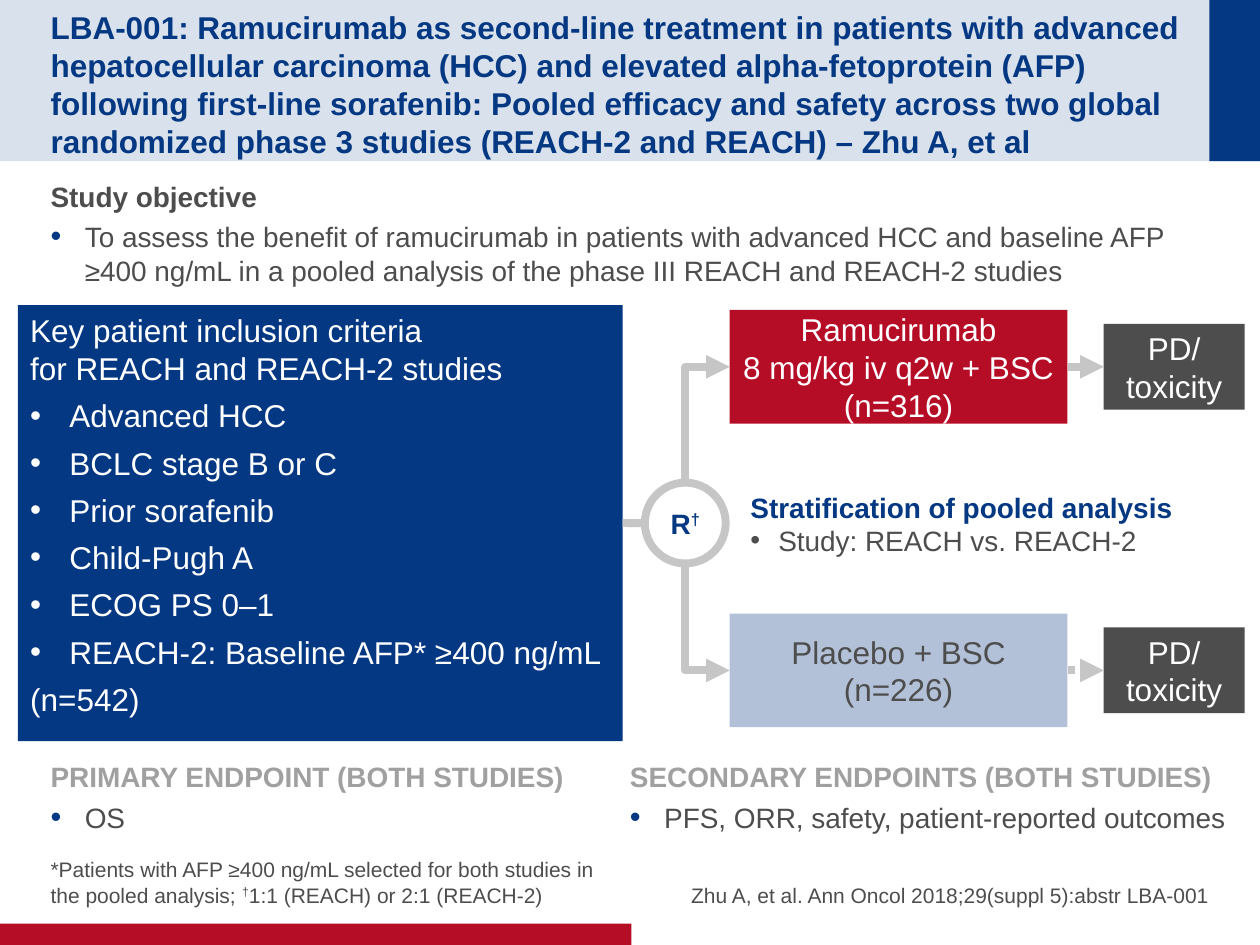
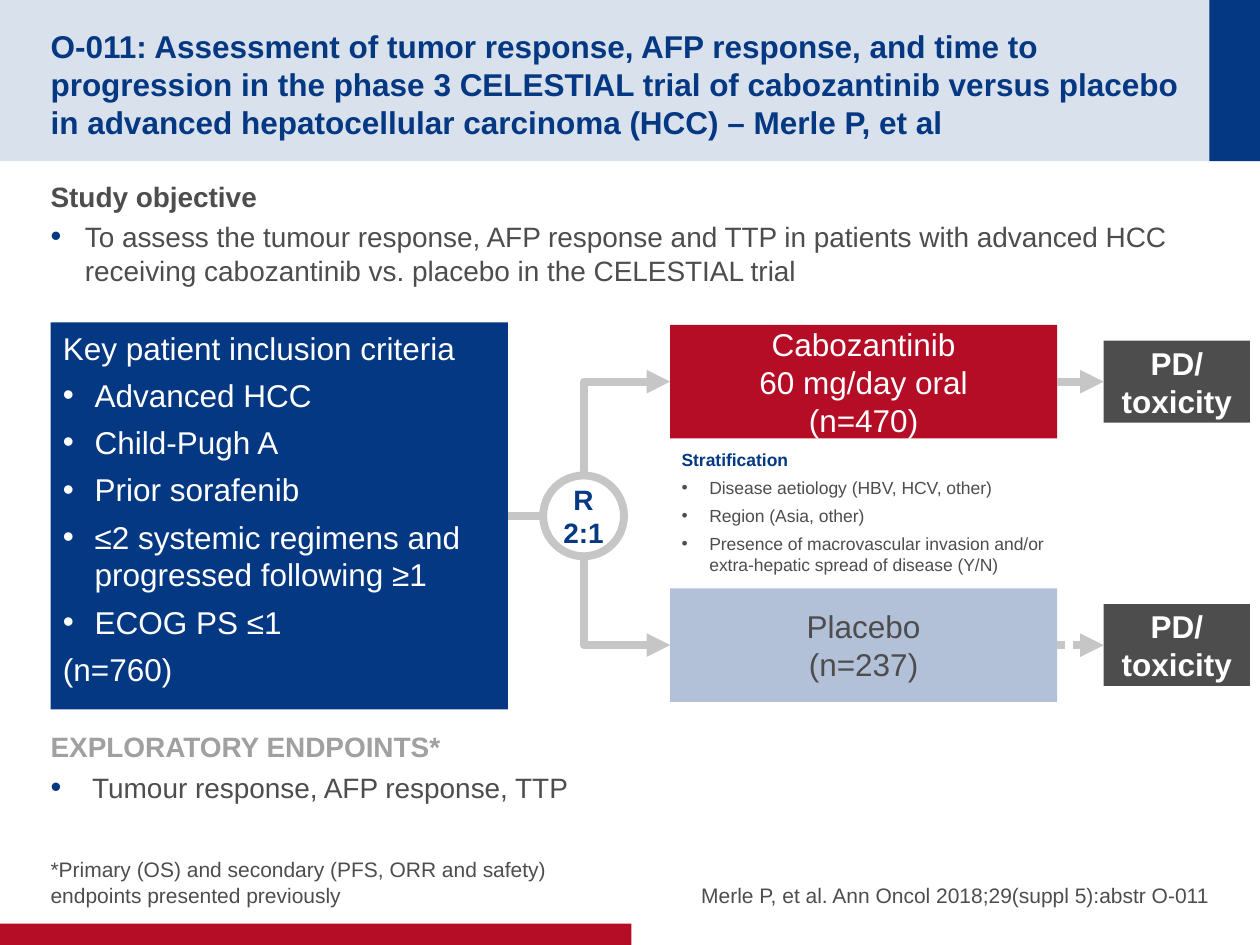
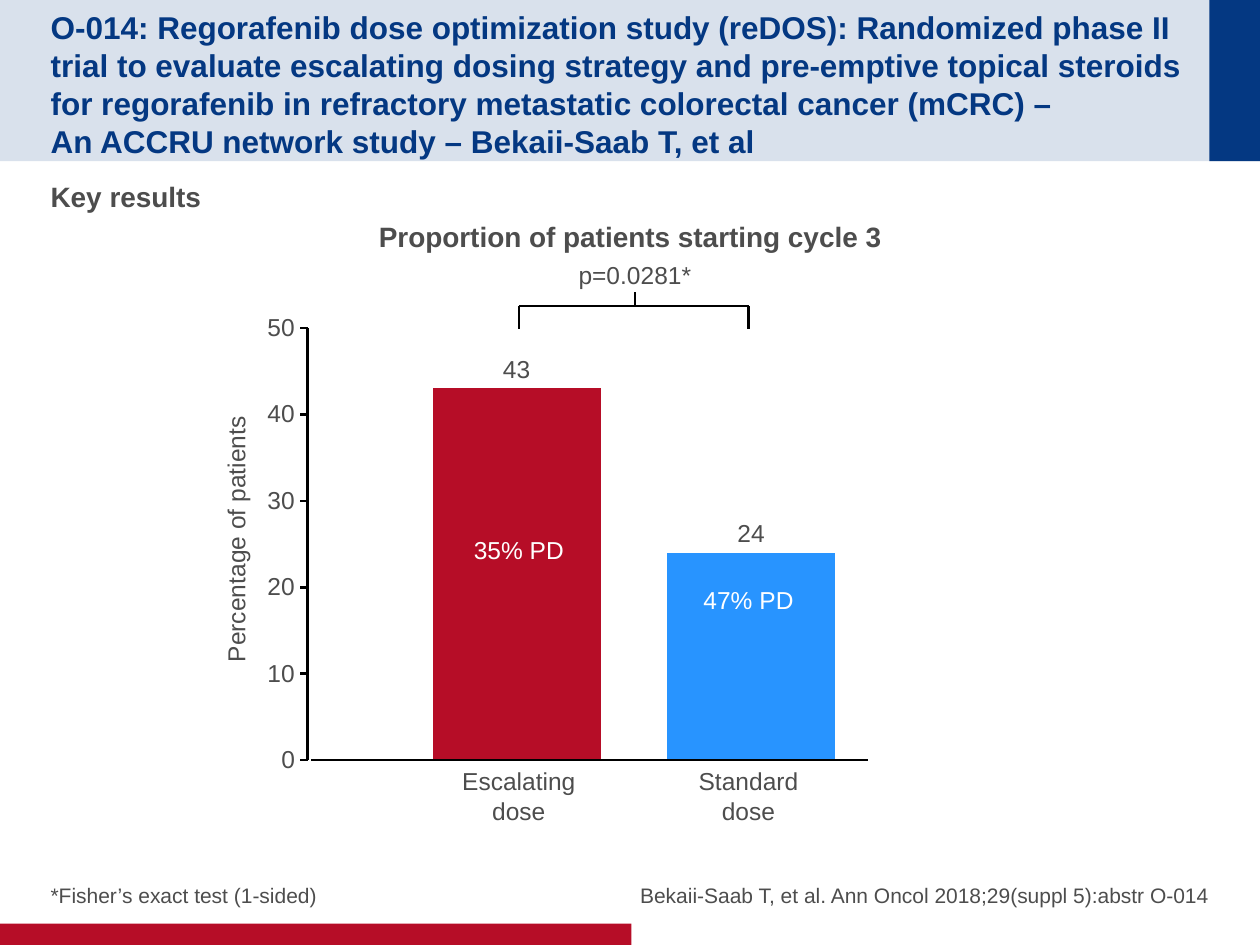
from dataclasses import dataclass, field
from typing import Any, NamedTuple, Optional, Sequence

from lxml import etree
from pptx import Presentation
from pptx import util as u
from pptx.chart import data as cd
from pptx.dml.color import RGBColor
from pptx.enum import chart as ec
from pptx.enum import dml, shapes, text
from pptx.oxml import ns

Cm = u.Cm
COMPARISON_LAYOUT = 4
CENTER, RIGHT = text.PP_ALIGN.CENTER, text.PP_ALIGN.RIGHT
MIDDLE = text.MSO_ANCHOR.MIDDLE
TOP_SIDE, LEFT_SIDE, RIGHT_SIDE = 0, 1, 3


@dataclass(frozen=True)
class Theme:
    font: str = "Arial"
    navy: RGBColor = RGBColor.from_string("043882")
    red: RGBColor = RGBColor.from_string("B60D27")
    ink: RGBColor = RGBColor.from_string("4D4D4D")
    pale: RGBColor = RGBColor.from_string("B2C0D8")
    sky: RGBColor = RGBColor.from_string("2894FF")
    flow: RGBColor = RGBColor.from_string("C6C6C6")
    muted: RGBColor = RGBColor.from_string("A0A0A0")
    white: RGBColor = RGBColor.from_string("FFFFFF")
    black: RGBColor = RGBColor.from_string("000000")
    large: float = 18
    normal: float = 16
    label: float = 14
    note: float = 12
    small: float = 10
    flow_width: float = 4.5
    axis_width: float = 1.5


THEME = Theme()


class Area(NamedTuple):
    """A rectangle in centimetres."""
    left: float
    top: float
    width: float
    height: float

    @property
    def lengths(self) -> tuple:
        return tuple(Cm(value) for value in self)

    @property
    def mid_y(self) -> float:
        return self.top + self.height / 2


class Para(NamedTuple):
    words: str
    size: float = THEME.normal
    color: RGBColor = THEME.ink
    bold: bool = False
    hang: float = 0
    accent: bool = False
    after: float = 0
    align: Any = text.PP_ALIGN.LEFT


@dataclass(frozen=True)
class Panel:
    """A free text block with its inner side margin."""
    area: Area
    paras: Sequence[Para]
    side: float = 0.25


@dataclass(frozen=True)
class Arm:
    treatment: str
    count: str
    top: float
    fill: RGBColor
    ink: RGBColor
    dash: Optional[Any] = None


@dataclass(frozen=True)
class Trial:
    criteria: Area
    criteria_paras: Sequence[Para]
    ratio: Sequence[str]
    circle_left: float
    arms: Sequence[Arm]
    arm_left: float
    arm_width: float
    outcome_width: float
    outcome_height: float
    outcome_bold: bool = False


@dataclass(frozen=True)
class Page:
    title: str
    body: Sequence[Para]
    footnote: str
    citation: str
    citation_width: float = 11.48
    trial: Optional[Trial] = None
    panels: Sequence[Panel] = field(default_factory=tuple)


class Label(NamedTuple):
    lines: Sequence[str]
    center_x: float
    top: float
    width: float
    color: RGBColor = THEME.ink
    rotation: float = 0


TITLE = Area(1.02, 0.51, 22.89, 2.24)
BODY = Area(1.02, 3.48, 23.37, 13.18)
FOOTNOTE = Area(1.02, 16.94, 11.48, 1.35)
CONTENT_RIGHT = 24.38
BANDS = (
    (Area(0, 0, 25.4, 3.25), THEME.navy, 15),
    (Area(24.38, 0, 1.02, 3.25), THEME.navy, 100),
    (Area(0, 18.62, 12.73, 0.43), THEME.red, 100),
)
CIRCLE = 1.63
ARM_HEIGHT = 2.29
OUTCOME_LEFT = 22.25


def apply(target: Any, values: dict) -> None:
    for name, value in values.items():
        setattr(target, name, value)


def add_xml(parent: Any, tag: str, **attributes: str) -> Any:
    return etree.SubElement(parent, ns.qn(tag), attributes)


def set_indent(paragraph: Any, para: Para) -> None:
    """Hang the paragraph behind a bullet, or clear both."""
    props = paragraph._p.get_or_add_pPr()
    props.set("marL", str(Cm(para.hang)))
    props.set("indent", str(-Cm(para.hang)))
    if not para.hang:
        add_xml(props, "a:buNone")
        return
    if para.accent:
        add_xml(add_xml(props, "a:buClr"), "a:srgbClr", val=str(THEME.navy))
        add_xml(props, "a:buSzPct", val="110000")
    add_xml(props, "a:buFont", typeface=THEME.font)
    add_xml(props, "a:buChar", char="•")


def add_run(paragraph: Any, words: str, para: Para) -> None:
    """Add a run; a dagger is raised."""
    run = paragraph.add_run()
    run.text = words
    apply(run.font, {"name": THEME.font, "size": u.Pt(para.size), "bold": para.bold})
    run.font.color.rgb = para.color
    if words == "†":
        run._r.get_or_add_rPr().set("baseline", "30000")


def write(shape: Any, paras: Sequence[Para], **frame_format: Any) -> None:
    frame = shape.text_frame
    apply(frame, {"word_wrap": True, "auto_size": text.MSO_AUTO_SIZE.NONE, **frame_format})
    for index, para in enumerate(paras):
        paragraph = frame.add_paragraph() if index else frame.paragraphs[0]
        apply(paragraph, {"alignment": para.align, "space_before": u.Pt(0),
                          "space_after": u.Pt(para.after)})
        set_indent(paragraph, para)
        for number, line in enumerate(para.words.split("\n")):
            if number:
                paragraph.add_line_break()
            for piece in filter(None, line.partition("†")):
                add_run(paragraph, piece, para)


def margins(left: float, top: float, right: float, bottom: float) -> dict:
    return {"margin_left": Cm(left), "margin_top": Cm(top),
            "margin_right": Cm(right), "margin_bottom": Cm(bottom)}


def add_box(slide: Any, area: Area, fill: Optional[RGBColor],
            preset: Any = shapes.MSO_SHAPE.RECTANGLE) -> Any:
    box = slide.shapes.add_shape(preset, *area.lengths)
    box.shadow.inherit = False
    box.line.fill.background()
    if fill is None:
        box.fill.background()
    else:
        box.fill.solid()
        box.fill.fore_color.rgb = fill
    return box


def add_line(parent: Any, start: tuple, end: tuple, color: RGBColor, width: float,
             arrow: bool = False, dash: Any = None,
             kind: Any = shapes.MSO_CONNECTOR.STRAIGHT) -> Any:
    line = parent.shapes.add_connector(kind, *(Cm(value) for value in (*start, *end)))
    line.line.color.rgb = color
    apply(line.line, {"width": u.Pt(width), "dash_style": dash})
    properties = line.element.spPr
    if arrow:
        add_xml(properties.find(ns.qn("a:ln")), "a:tailEnd", type="triangle")
    add_xml(properties, "a:effectLst")
    return line


def add_branch(slide: Any, start: tuple, end: tuple) -> None:
    """Draw an arrow that leaves vertically, then turns right."""
    rise, run = abs(end[1] - start[1]), end[0] - start[0]
    mid_x, mid_y = (start[0] + end[0]) / 2, (start[1] + end[1]) / 2
    corner = (mid_x - rise / 2, mid_y - run / 2)
    branch = add_line(slide, corner, (corner[0] + rise, corner[1] + run), THEME.flow,
                      THEME.flow_width, arrow=True, kind=shapes.MSO_CONNECTOR.ELBOW)
    properties = branch.element.spPr
    properties.find(ns.qn("a:prstGeom")).set("prst", "bentConnector2")
    upward = end[1] < start[1]
    turn = {"rot": "5400000", "flipH": "1", "flipV": "1"} if upward else {
        "rot": "16200000", "flipH": "1"}
    for name, value in turn.items():
        properties.find(ns.qn("a:xfrm")).set(name, value)


def add_bands(deck: Any, slide: Any) -> None:
    """Draw the bands and move them to the slide master."""
    for index, (area, fill, opacity) in enumerate(BANDS):
        band = add_box(slide, area, fill).element
        if opacity < 100:
            tint = band.xpath("./p:spPr/a:solidFill/a:srgbClr")[0]
            add_xml(tint, "a:alpha", val=str(opacity * 1000))
        band.xpath(".//p:cNvPr")[0].set("id", str(100 + index))
        deck.slide_master.shapes.element.insert(2 + index, band)


def add_trial(slide: Any, trial: Trial) -> None:
    criteria = add_box(slide, trial.criteria, THEME.navy, shapes.MSO_SHAPE.ROUNDED_RECTANGLE)
    criteria.adjustments[0] = 0
    write(criteria, trial.criteria_paras, vertical_anchor=text.MSO_ANCHOR.TOP)

    hub_y = trial.criteria.mid_y
    hub_x = trial.circle_left + CIRCLE / 2
    hub = add_box(slide, Area(trial.circle_left, hub_y - CIRCLE / 2, CIRCLE, CIRCLE), None,
                  shapes.MSO_SHAPE.OVAL)
    hub.line.color.rgb = THEME.flow
    hub.line.width = u.Pt(THEME.flow_width)
    write(hub, [Para(words, color=THEME.navy, bold=True, align=CENTER) for words in trial.ratio],
          word_wrap=False, vertical_anchor=MIDDLE)
    entry = add_line(slide, (trial.criteria.left + trial.criteria.width, hub_y),
                     (trial.circle_left, hub_y), THEME.flow, THEME.flow_width)
    entry.begin_connect(criteria, RIGHT_SIDE)

    tight = {"vertical_anchor": MIDDLE, **margins(0.25, 0, 0.25, 0)}
    for arm in trial.arms:
        area = Area(trial.arm_left, arm.top, trial.arm_width, ARM_HEIGHT)
        outcome_area = Area(OUTCOME_LEFT, area.mid_y - trial.outcome_height / 2,
                            trial.outcome_width, trial.outcome_height)
        treatment = add_box(slide, area, arm.fill)
        write(treatment, [Para(words, THEME.large, arm.ink, align=CENTER)
                          for words in (arm.treatment, arm.count)], **tight)
        outcome = add_box(slide, outcome_area, THEME.ink)
        write(outcome, [Para("PD/\ntoxicity", THEME.large, THEME.white, trial.outcome_bold,
                             align=CENTER)], **tight)
        direction = -1 if area.mid_y < hub_y else 1
        add_branch(slide, (hub_x, hub_y + direction * CIRCLE / 2), (area.left, area.mid_y))
        progress = add_line(slide, (area.left + area.width, area.mid_y),
                            (OUTCOME_LEFT, area.mid_y), THEME.flow, THEME.flow_width,
                            arrow=True, dash=arm.dash)
        progress.begin_connect(treatment, RIGHT_SIDE)
        progress.end_connect(outcome, LEFT_SIDE)


def add_page(deck: Any, page: Page) -> Any:
    slide = deck.slides.add_slide(deck.slide_layouts[COMPARISON_LAYOUT])
    citation = Area(CONTENT_RIGHT - page.citation_width, FOOTNOTE.top,
                    page.citation_width, FOOTNOTE.height)
    bottom = {"vertical_anchor": text.MSO_ANCHOR.BOTTOM, **margins(0, 0, 0, 0)}
    parts = {
        0: (TITLE, [Para(page.title, THEME.large, THEME.navy, True)],
            {"vertical_anchor": MIDDLE, **margins(0, 0.13, 0, 0)}),
        1: (FOOTNOTE, [Para(page.footnote, THEME.note, after=4)], bottom),
        2: (BODY, page.body,
            {"vertical_anchor": text.MSO_ANCHOR.TOP, **margins(0, 0.13, 0, 0.13)}),
        3: (citation, [Para(page.citation, THEME.note, after=4, align=RIGHT)], bottom),
    }
    for holder in list(slide.placeholders):
        part = parts.get(holder.placeholder_format.idx)
        if part is None:
            holder.element.getparent().remove(holder.element)
            continue
        area, paras, frame_format = part
        apply(holder, dict(zip(("left", "top", "width", "height"), area.lengths)))
        write(holder, paras, **frame_format)
    if page.trial:
        add_trial(slide, page.trial)
    for panel in page.panels:
        write(slide.shapes.add_textbox(*panel.area.lengths), panel.paras,
              **margins(panel.side, 0.13, panel.side, 0.13))
    return slide


def add_dose_chart(slide: Any) -> None:
    figures = cd.CategoryChartData()
    figures.categories = ["1"]
    figures.add_series("Series 1", [43])
    figures.add_series("Series 2", [24])
    chart = slide.shapes.add_chart(ec.XL_CHART_TYPE.COLUMN_CLUSTERED,
                                   *Area(5.11, 6.15, 14.53, 9.65).lengths, figures).chart
    apply(chart, {"has_legend": False, "has_title": False})
    apply(chart.font, {"name": THEME.font, "size": u.Pt(THEME.label)})
    chart.font.color.rgb = THEME.ink
    chart.category_axis.visible = False
    axis = chart.value_axis
    apply(axis, {"minimum_scale": 0, "maximum_scale": 50, "major_unit": 10,
                 "has_major_gridlines": False, "major_tick_mark": ec.XL_TICK_MARK.OUTSIDE})
    axis.format.line.color.rgb = THEME.black
    axis.format.line.width = u.Pt(THEME.axis_width)
    plot = chart.plots[0]
    apply(plot, {"overlap": -40, "gap_width": 150, "vary_by_categories": False})
    for series, color in zip(plot.series, (THEME.red, THEME.sky)):
        series.format.fill.solid()
        series.format.fill.fore_color.rgb = color
        apply(series.data_labels, {"show_value": True,
                                   "position": ec.XL_LABEL_POSITION.OUTSIDE_END})
    plot_area = chart.element.xpath(".//c:plotArea")[0]
    for old in plot_area.findall(ns.qn("c:layout")):
        plot_area.remove(old)
    layout = etree.Element(ns.qn("c:layout"))
    manual = add_xml(layout, "c:manualLayout")
    for tag, value in {"layoutTarget": "inner", "xMode": "edge", "yMode": "edge",
                       "x": "0.075", "y": "0.048", "w": "0.906", "h": "0.903"}.items():
        add_xml(manual, f"c:{tag}", val=value)
    plot_area.insert(0, layout)


def add_dose_results(slide: Any) -> None:
    add_dose_chart(slide)
    escalating_x, standard_x, p_x = 10.46, 15.09, 12.8
    baseline, bar_y, foot_y, stem_y = 15.32, 6.17, 6.63, 5.89
    add_line(slide, (6.27, baseline), (17.5, baseline), THEME.black, THEME.axis_width)
    bracket = slide.shapes.add_group_shape()
    for start, end in (
        ((escalating_x, bar_y), (standard_x, bar_y)),
        ((escalating_x, bar_y), (escalating_x, foot_y)),
        ((standard_x, bar_y), (standard_x, foot_y)),
        ((p_x, stem_y), (p_x, bar_y)),
    ):
        add_line(bracket, start, end, THEME.black, THEME.axis_width)
    for label in (
        Label(["Percentage of patients"], 4.76, 10.44, 5.61, rotation=270),
        Label(["Escalating", "dose"], escalating_x, baseline, 2.82),
        Label(["Standard", "dose"], standard_x, baseline, 2.54),
        Label(["35% PD"], escalating_x, 10.67, 2.34, THEME.white),
        Label(["47% PD"], standard_x, 11.66, 2.34, THEME.white),
        Label(["p=0.0281*"], p_x, 5.11, 2.79),
    ):
        area = Area(label.center_x - label.width / 2, label.top, label.width,
                    0.27 + 0.59 * len(label.lines))
        box = slide.shapes.add_textbox(*area.lengths)
        box.rotation = label.rotation
        write(box, [Para(words, THEME.label, label.color, align=CENTER)
                    for words in label.lines], word_wrap=False)


def section(heading: str, item: str, color: RGBColor = THEME.ink, hang: float = 0.69) -> list:
    return [Para(heading, color=color, bold=True, after=4),
            Para(item, hang=hang, accent=True, after=4)]


def criteria_list(heading: str, items: Sequence[str], count: str, hang: float) -> list:
    rows = [(heading, 0), *((item, hang) for item in items), (count, 0)]
    return [Para(words, THEME.large, THEME.white, hang=indent, after=5.4)
            for words, indent in rows]


def stratification(heading: str, items: Sequence[str], size: float, after: float) -> list:
    return [Para(heading, size, THEME.navy, True, after=after),
            *(Para(item, size, hang=0.56, after=after) for item in items)]


def arms(treatment: str, count: str, top: float,
         control: str, control_count: str, control_top: float) -> list:
    return [Arm(treatment, count, top, THEME.red, THEME.white),
            Arm(control, control_count, control_top, THEME.pale, THEME.ink,
                dml.MSO_LINE.ROUND_DOT)]


REACH = Page(
    "LBA-001: Ramucirumab as second-line treatment in patients with advanced hepatocellular carcinoma (HCC) and elevated alpha-fetoprotein (AFP) following first-line sorafenib: Pooled efficacy and safety across two global randomized phase 3 studies (REACH-2 and REACH) – Zhu A, et al",
    section("Study objective", "To assess the benefit of ramucirumab in patients with advanced HCC and baseline AFP ≥400 ng/mL in a pooled analysis of the phase III REACH and REACH-2 studies"),
    "*Patients with AFP ≥400 ng/mL selected for both studies in the pooled analysis; †1:1 (REACH) or 2:1 (REACH-2)",
    "Zhu A, et al. Ann Oncol 2018;29(suppl 5):abstr LBA-001",
    trial=Trial(
        Area(0.36, 6.15, 12.19, 8.79),
        criteria_list("Key patient inclusion criteria\nfor REACH and REACH-2 studies",
                      ["Advanced HCC", "BCLC stage B or C", "Prior sorafenib", "Child-Pugh A",
                       "ECOG PS 0–1", "REACH-2: Baseline AFP* ≥400 ng/mL"], "(n=542)", 0.79),
        ["R†"], 13,
        arms("Ramucirumab\n8 mg/kg iv q2w + BSC", "(n=316)", 6.25,
             "Placebo + BSC", "(n=226)", 12.37),
        14.71, 6.81, 2.84, 1.73),
    panels=(
        Panel(Area(14.88, 9.75, 10.5, 2.36),
              stratification("Stratification of pooled analysis",
                             ["Study: REACH vs. REACH-2"], THEME.normal, 0)),
        Panel(Area(1.02, 15.19, 11.48, 2.21),
              section("PRIMARY ENDPOINT (BOTH STUDIES)", "OS", THEME.muted), 0),
        Panel(Area(12.45, 15.19, 12.73, 2.21),
              section("SECONDARY ENDPOINTS (BOTH STUDIES)",
                      "PFS, ORR, safety, patient-reported outcomes", THEME.muted)),
    ))

CELESTIAL = Page(
    "O-011: Assessment of tumor response, AFP response, and time to progression in the phase 3 CELESTIAL trial of cabozantinib versus placebo in advanced hepatocellular carcinoma (HCC) – Merle P, et al",
    section("Study objective", "To assess the tumour response, AFP response and TTP in patients with advanced HCC receiving cabozantinib vs. placebo in the CELESTIAL trial"),
    "*Primary (OS) and secondary (PFS, ORR and safety) endpoints presented previously",
    "Merle P, et al. Ann Oncol 2018;29(suppl 5):abstr O-011",
    trial=Trial(
        Area(1.02, 6.5, 9.22, 7.8),
        criteria_list("Key patient inclusion criteria",
                      ["Advanced HCC", "Child-Pugh A", "Prior sorafenib",
                       "≤2 systemic regimens and progressed following ≥1", "ECOG PS ≤1"],
                      "(n=760)", 0.64),
        ["R", "2:1"], 10.95,
        arms("Cabozantinib\n60 mg/day oral", "(n=470)", 6.55, "Placebo", "(n=237)", 11.86),
        13.51, 7.8, 2.95, 1.65, True),
    panels=(
        Panel(Area(13.49, 8.92, 7.82, 2.49),
              stratification("Stratification",
                             ["Disease aetiology (HBV, HCV, other)", "Region (Asia, other)",
                              "Presence of macrovascular invasion and/or extra-hepatic spread of disease (Y/N)"],
                             THEME.small, 4)),
        Panel(Area(1.02, 14.58, 11.48, 1.96),
              section("EXPLORATORY ENDPOINTS*", "Tumour response, AFP response, TTP",
                      THEME.muted, 0.84), 0),
    ))

REDOS = Page(
    "O-014: Regorafenib dose optimization study (reDOS): Randomized phase II trial to evaluate escalating dosing strategy and pre-emptive topical steroids for regorafenib in refractory metastatic colorectal cancer (mCRC) –\nAn ACCRU network study – Bekaii-Saab T, et al",
    [Para("Key results", bold=True, after=4),
     Para("Proportion of patients starting cycle 3", bold=True, after=4, align=CENTER)],
    "*Fisher’s exact test (1-sided)",
    "Bekaii-Saab T, et al. Ann Oncol 2018;29(suppl 5):abstr O-014",
    citation_width=12.5)


def main() -> None:
    deck = Presentation()
    apply(deck, {"slide_width": Cm(25.4), "slide_height": Cm(19.05)})
    reach, _, redos = [add_page(deck, page) for page in (REACH, CELESTIAL, REDOS)]
    add_bands(deck, reach)
    add_dose_results(redos)
    deck.save("out.pptx")


if __name__ == "__main__":
    main()
